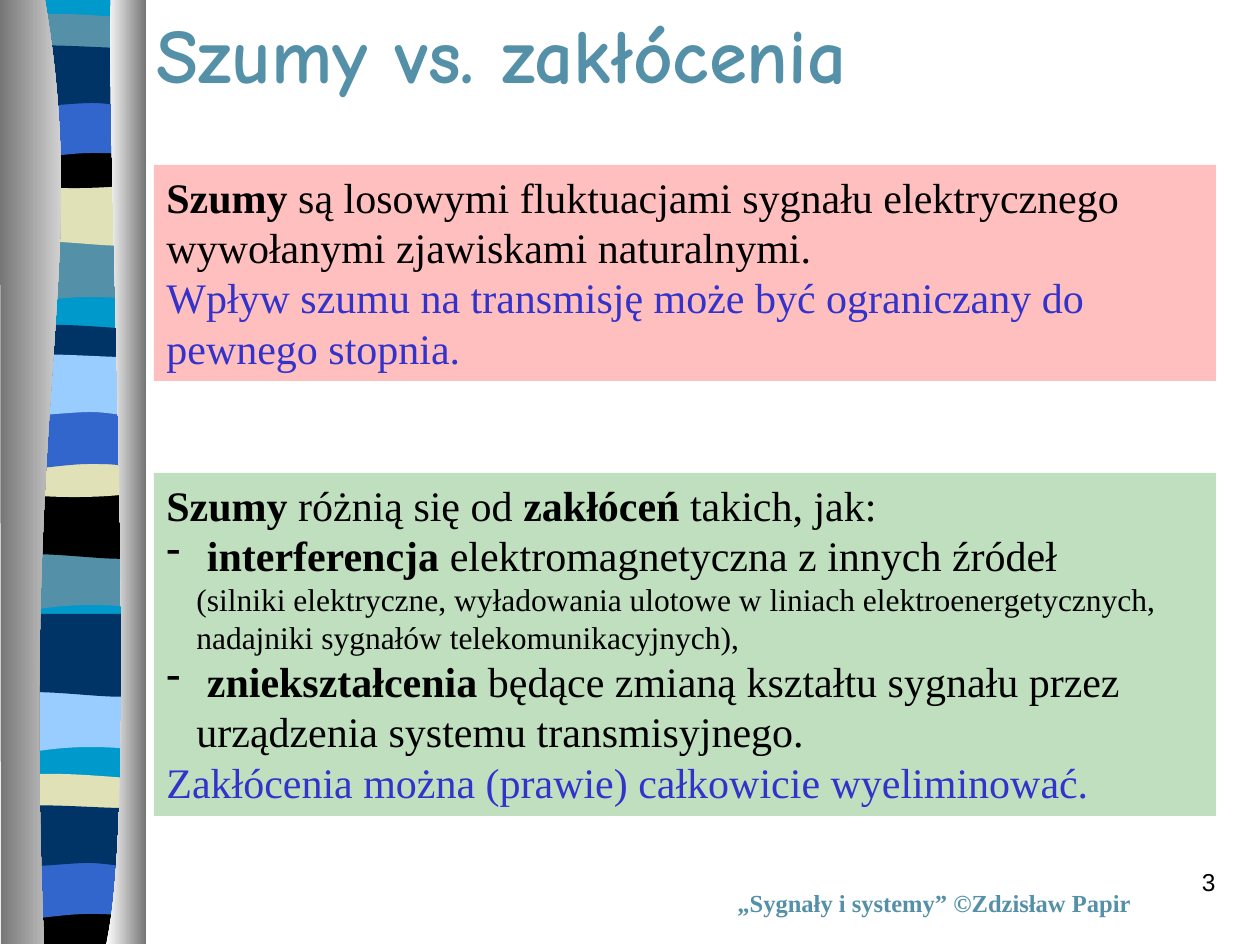
import pptx
import pptx.util
import pptx.dml.color
import pptx.enum.shapes
import pptx.enum.text
import pptx.oxml.ns
from lxml import etree

EMU_PER_PX = 914400 / 126
COLOURS = {
    "cyan": "0099CC", "teal": "5490A8", "sand": "E1E1B7", "black": "000000",
    "blue": "3366CC", "navy": "003366", "sky": "99CCFF", "white": "FFFFFF",
    "grey": "767676", "red": "FF0000", "green": "008000", "violet": "3333CC",
}
SERIF = "Times New Roman"

# Content: paragraphs are (bulleted, runs); runs are (text, size, bold, colour)
TITLE = "Szumy vs. zakłócenia"
FOOTER = "„Sygnały i systemy” ©Zdzisław Papir"
PAGE = "3"
NOISE = [
    (False, [("Szumy", 24, True, "black"),
             (" są losowymi fluktuacjami sygnału elektrycznego wywołanymi "
              "zjawiskami naturalnymi.", 24, False, "black")]),
    (False, [("Wpływ szumu na transmisję może być ograniczany do pewnego "
              "stopnia.", 24, False, "violet")]),
]
INTERFERENCE = [
    (False, [("Szumy", 24, True, "black"),
             (" różnią się od ", 24, False, "black"),
             ("zakłóceń", 24, True, "black"),
             (" takich, jak:", 24, False, "black")]),
    (True, [(" ", 24, False, "black"),
            ("interferencja", 24, True, "black"),
            (" elektromagnetyczna z innych źródeł\n", 24, False, "black"),
            ("(silniki elektryczne, wyładowania ulotowe w liniach "
             "elektroenergetycznych, nadajniki sygnałów "
             "telekomunikacyjnych),", 18, False, "black")]),
    (True, [(" ", 24, False, "black"),
            ("zniekształcenia", 24, True, "black"),
            (" będące zmianą kształtu sygnału przez urządzenia systemu "
             "transmisyjnego.", 24, False, "black")]),
    (False, [("Zakłócenia można (prawie) całkowicie wyeliminować.",
              24, False, "violet")]),
]
PANELS = [((154, 165, 1062, 216), "red", NOISE),
          ((154, 473, 1062, 343), "green", INTERFERENCE)]

# Wave outlines in px: a pair is a corner, six numbers are a Bezier curve
WAVES = {
    "sag": [(136, 0), (136, 67), (42, 57, 23, 77, 0, 67), (0, 0)],
    "swell": [(136, -12), (136, 68), (115, 77, 43, 61, 0, 68), (0, -12)],
    "lens": [(136, 0), (136, 37), (115, 42, 23, 42, 0, 37), (0, 0),
             (9, -6, 30, -5, 53, -5), (76, -5, 120, -1, 136, 0)],
    "bowl": [(136, 0), (136, 46), (113, 54, 24, 54, 0, 46), (0, 0),
             (83, 6, 107, 0, 136, 0)],
    "arch": [(136, 0), (136, 68), (115, 61, 106, 61, 83, 61),
             (60, 61, 20, 68, 0, 68), (0, 0)],
    "ripple": [(136, -2), (136, 54), (127, 60, 107, 53, 84, 53),
               (61, 53, 14, 60, 0, 54), (0, -2), (19, -8, 93, -2, 116, -2)],
    "floor": [(136, 0), (136, 47), (0, 47), (0, 0), (83, 6, 107, 0, 136, 0)],
    "base": [(136, 0), (136, 942), (0, 942), (0, 0)],
}
STRIPES = [  # wave, colour, left, top
    ("base", "cyan", 8, 0),
    ("sag", "teal", 6, 233), ("swell", "sand", 8, 175),
    ("lens", "teal", 8, 19), ("bowl", "black", 6, 136),
    ("arch", "blue", 8, 92), ("ripple", "navy", 8, 50),
    ("sag", "teal", 5, 541), ("swell", "black", 6, 488),
    ("lens", "navy", 6, 330), ("bowl", "sand", 6, 445),
    ("arch", "blue", 6, 403), ("ripple", "sky", 6, 359),
    ("sag", "sky", 5, 683), ("swell", "navy", 6, 626),
    ("lens", "sand", 5, 779), ("floor", "black", 5, 897),
    ("arch", "blue", 4, 853), ("ripple", "navy", 4, 810),
]
CURTAINS = [  # outline, colour on the left, colour on the right
    ([(45, 0), (91, 272, 21, 373, 44, 944), (1, 944), (0, 0)],
     "grey", "white"),
    ([(111, 0), (106, 157, 140, 814, 106, 944), (146, 944), (146, 0)],
     "white", "grey"),
]


def px(length):
    return pptx.util.Emu(round(length * EMU_PER_PX))


def rgb(name):
    return pptx.dml.color.RGBColor.from_string(COLOURS[name])


def add_outline(shapes, outline, left=0, top=0):
    points = [(px(left + x), px(top + y)) for part in outline
              for x, y in zip(part[::2], part[1::2])]
    builder = shapes.build_freeform(*points[0])
    builder.add_line_segments(points[1:], close=True)
    shape = builder.convert_to_shape()
    # Join each three points of a curve into one Bezier segment
    qn = pptx.oxml.ns.qn
    lines = iter(shape._element.spPr.findall(".//" + qn("a:lnTo")))
    for part in outline[1:]:
        first = next(lines)
        if len(part) == 6:
            curve = etree.Element(qn("a:cubicBezTo"))
            first.addprevious(curve)
            for line in (first, next(lines), next(lines)):
                curve.append(line[0])
                line.getparent().remove(line)
    shape.shadow.inherit = False
    shape.line.fill.background()
    return shape


def place(shape, box):
    shape.left, shape.top, shape.width, shape.height = map(px, box)


def style(run, size, bold, colour, font=SERIF):
    run.font.name, run.font.size = font, pptx.util.Pt(size)
    run.font.bold, run.font.color.rgb = bold, rgb(colour)


def fill_paragraph(paragraph, bulleted, runs):
    paragraph.alignment = pptx.enum.text.PP_ALIGN.LEFT
    if bulleted:
        props = paragraph._p.get_or_add_pPr()
        props.set("marL", str(px(30)))
        props.set("indent", str(-px(30)))
        etree.SubElement(props, pptx.oxml.ns.qn("a:buFontTx"))
        bullet = etree.SubElement(props, pptx.oxml.ns.qn("a:buChar"))
        bullet.set("char", "-")
    for text, size, bold, colour in runs:
        run = paragraph.add_run()
        run.text = text.rstrip("\n")
        style(run, size, bold, colour)
        if text.endswith("\n"):
            paragraph.add_line_break()


def add_label(shapes, box, text, bold, colour, font, align, wrap):
    frame = shapes.add_textbox(*map(px, box)).text_frame
    frame.word_wrap = wrap
    frame.text = text
    frame.paragraphs[0].alignment = align
    style(frame.paragraphs[0].runs[0], 14, bold, colour, font)


def main():
    deck = pptx.Presentation()
    deck.slide_width, deck.slide_height = px(1260), px(945)
    slide = deck.slides.add_slide(deck.slide_layouts[5])
    shapes = slide.shapes
    align = pptx.enum.text.PP_ALIGN

    # Striped ribbon between two shaded curtains
    for wave, colour, left, top in STRIPES:
        stripe = add_outline(shapes, WAVES[wave], left, top)
        stripe.fill.solid()
        stripe.fill.fore_color.rgb = rgb(colour)
    for outline, *shades in CURTAINS:
        curtain = add_outline(shapes, outline)
        curtain.fill.gradient()
        curtain.fill.gradient_angle = 0
        for stop, shade in zip(curtain.fill.gradient_stops, shades):
            stop.color.rgb = rgb(shade)

    # Title
    title = shapes.title
    place(title, (144, 0, 827, 106))
    frame = title.text_frame
    frame.text = TITLE
    frame.word_wrap = False
    frame.auto_size = pptx.enum.text.MSO_AUTO_SIZE.NONE
    frame.vertical_anchor = pptx.enum.text.MSO_ANCHOR.TOP
    frame.paragraphs[0].alignment = align.LEFT
    style(frame.paragraphs[0].runs[0], 44, True, "teal", "Comic Neue")

    # Definition panels
    for box, colour, paragraphs in PANELS:
        panel = shapes.add_shape(
            pptx.enum.shapes.MSO_SHAPE.RECTANGLE, *map(px, box))
        panel.shadow.inherit = False
        panel.line.fill.background()
        panel.fill.solid()
        panel.fill.fore_color.rgb = rgb(colour)
        tint = panel._element.spPr.find(".//" + pptx.oxml.ns.qn("a:srgbClr"))
        etree.SubElement(tint, pptx.oxml.ns.qn("a:alpha")).set("val", "25000")
        frame = panel.text_frame
        frame.word_wrap = True
        frame.vertical_anchor = pptx.enum.text.MSO_ANCHOR.TOP
        for index, (bulleted, runs) in enumerate(paragraphs):
            paragraph = frame.add_paragraph() if index else frame.paragraphs[0]
            fill_paragraph(paragraph, bulleted, runs)

    # Footer and page number
    add_label(shapes, (725, 882, 430, 43), FOOTER, True, "teal", SERIF,
              align.LEFT, False)
    add_label(shapes, (966, 861, 262, 63), PAGE, False, "black", "Arial",
              align.RIGHT, True)
    deck.save("out.pptx")


if __name__ == "__main__":
    main()
